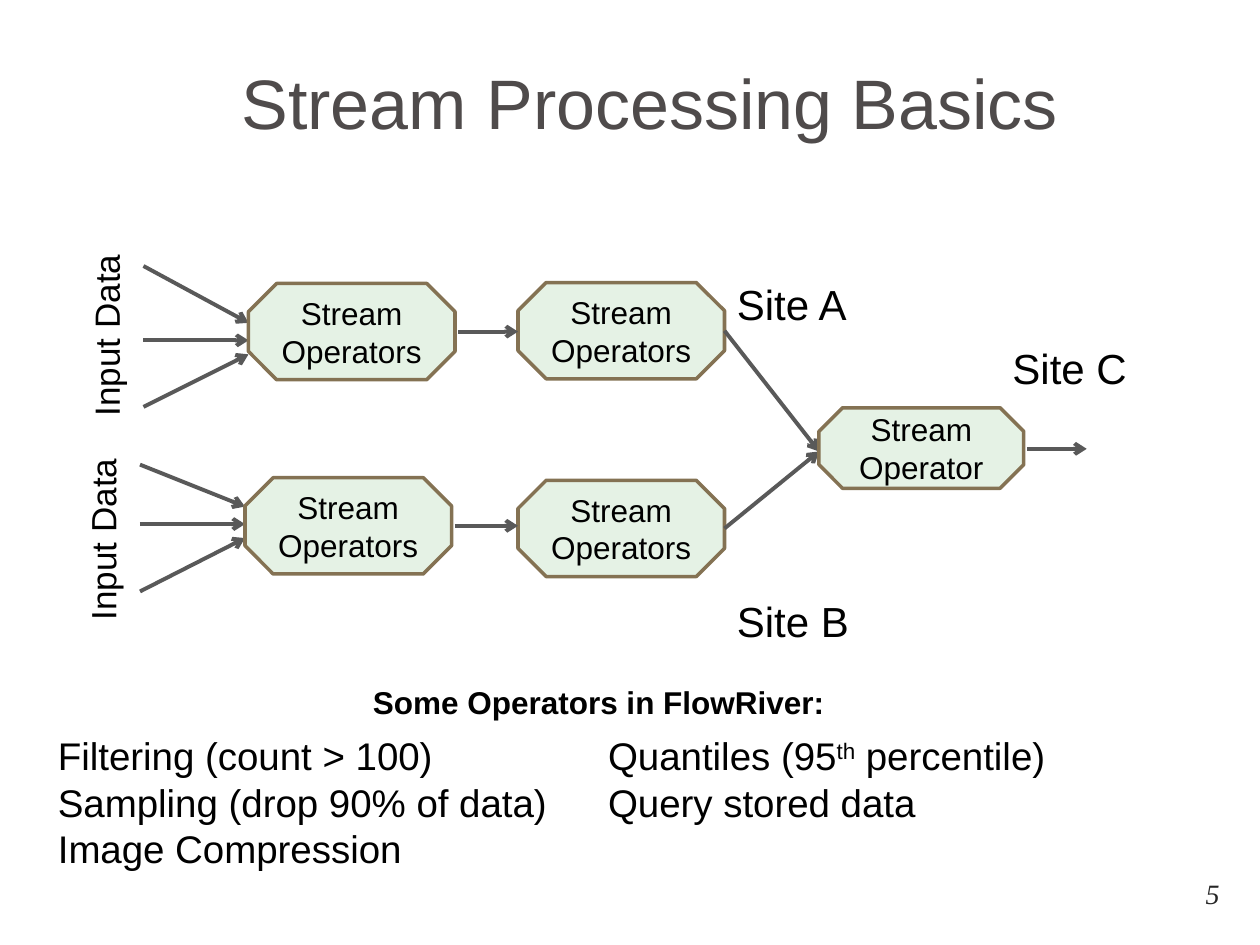
from lxml.etree import SubElement
from pptx import Presentation
from pptx.dml.color import RGBColor
from pptx.enum.shapes import MSO_CONNECTOR as Line, MSO_SHAPE as Shape
from pptx.enum.text import MSO_ANCHOR as Anchor, PP_ALIGN as Align
from pptx.oxml.ns import qn
from pptx.util import Pt

BLACK, GREY, BROWN, GREEN = "000000", "595959", "847253", "008000"
OPERATOR_W, OPERATOR_H = 118, 55


def rgb(color):
    return RGBColor.from_string(color)


def style(paragraph, size, color=BLACK, font="Arial", align=Align.LEFT):
    paragraph.alignment = align
    paragraph.font.size = Pt(size)
    paragraph.font.name = font
    paragraph.font.color.rgb = rgb(color)


def add_text(slide, box, lines, size, wrap=True, **look):
    text_box = slide.shapes.add_textbox(*map(Pt, box))
    frame = text_box.text_frame
    frame.word_wrap = wrap
    frame.text = "\n".join(lines)
    for paragraph in frame.paragraphs:
        style(paragraph, size, **look)
    return text_box


def add_arrow(slide, x1, y1, x2, y2):
    arrow = slide.shapes.add_connector(Line.STRAIGHT, Pt(x1), Pt(y1), Pt(x2), Pt(y2))
    arrow.line.color.rgb = rgb(GREY)
    arrow.line.width = Pt(2.25)
    SubElement(arrow.line._get_or_add_ln(), qn("a:tailEnd"), type="arrow")
    SubElement(arrow._element.spPr, qn("a:effectLst"))


def add_operator(slide, box, label):
    operator = slide.shapes.add_shape(Shape.OCTAGON, *map(Pt, box))
    operator.shadow.inherit = False
    operator.fill.solid()
    operator.fill.fore_color.rgb = rgb(GREEN)
    tint = operator._element.spPr.find(qn("a:solidFill"))[0]
    SubElement(tint, qn("a:alpha"), val="10000")
    operator.line.color.rgb = rgb(BROWN)
    operator.line.width = Pt(2)
    frame = operator.text_frame
    frame.word_wrap = True
    frame.vertical_anchor = Anchor.MIDDLE
    frame.text = label
    style(frame.paragraphs[0], 18, align=Align.CENTER)


def add_title(slide, box, text):
    title = slide.shapes.title
    title.left, title.top, title.width, title.height = map(Pt, box)
    frame = title.text_frame
    frame.text = text
    frame.vertical_anchor = Anchor.BOTTOM
    frame.margin_bottom = Pt(7.2)
    style(frame.paragraphs[0], 40, "4F4B4B", align=Align.CENTER)


def add_site_branch(slide, left, top, second, feeds, label_middle):
    """Input data flowing through two operators; feeds are (start, end) heights."""
    label_w, label_h = 108, 32
    label_box = (left - 81 - label_w / 2, top + label_middle - label_h / 2, label_w, label_h)
    add_text(slide, label_box, ["Input Data"], 20, wrap=False).rotation = 270
    for start, end in feeds:
        add_arrow(slide, left - 60, top + start, left, top + end)
    for x, y in ((left, top), second):
        add_operator(slide, (x, y, OPERATOR_W, OPERATOR_H), "Stream Operators")
    link_y = top + OPERATOR_H / 2
    add_arrow(slide, left + OPERATOR_W + 2, link_y, second[0], link_y)


def add_merge_site(slide, left, top, sources):
    width, height = 117, 46
    for x, y in sources:
        add_arrow(slide, x, y, left, top + height / 2 + 2)
    add_operator(slide, (left, top, width, height), "Stream Operator")
    output_y = top + height / 2 + 0.5
    add_arrow(slide, left + width + 2, output_y, left + width + 36, output_y)


def add_operator_list(slide, left, top):
    heading = add_text(slide, (left + 180, top - 28, 276, 29),
                       ["Some Operators in FlowRiver:"], 18, wrap=False)
    heading.text_frame.paragraphs[0].font.bold = True
    examples = add_text(slide, (left, top, 643, 114),
                        ["Filtering (count > 100)", "Sampling (drop 90% of data)",
                         "Image Compression", "", "Query stored data"], 22)
    frame = examples.text_frame
    # The bottom margin leaves room for three lines in each column.
    frame.margin_bottom = Pt(27)
    frame._txBody.bodyPr.set("numCol", "2")
    quantiles = frame.paragraphs[3]
    for text in ("Quantiles (95", "th", " percentile)"):
        run = quantiles.add_run()
        run.text = text
        if text == "th":
            run.font._element.set("baseline", "30000")


def main():
    deck = Presentation()
    deck.slide_width, deck.slide_height = Pt(720), Pt(540)
    slide = deck.slides.add_slide(deck.slide_layouts[5])

    add_title(slide, (35, -0.5, 672.5, 90), "Stream Processing Basics")
    site_a, site_b = (296, 161.5), (296, 274.5)
    add_site_branch(slide, 142, 162, site_a,
                    [(-10, 22.5), (32.5, 32.5), (70.5, 40.5)], 29)
    add_site_branch(slide, 140, 273, site_b,
                    [(-7.5, 16.5), (26.5, 26.5), (65, 34.5)], 34.5)
    add_merge_site(slide, 468, 233,
                   [(x + OPERATOR_W, y + OPERATOR_H / 2) for x, y in (site_a, site_b)])
    for site, x, y, width in (("A", 414, 155.5, 210), ("B", 414, 337, 210),
                              ("C", 571.5, 192, 97)):
        add_text(slide, (x, y, width, 36), [f"Site {site}"], 24)
    add_operator_list(slide, 26, 415)
    number = add_text(slide, (657, 496, 47, 29), ["5"], 16,
                      color="262626", font="Times New Roman", align=Align.RIGHT)
    number.text_frame.vertical_anchor = Anchor.MIDDLE
    number.text_frame.paragraphs[0].font.italic = True

    deck.save("out.pptx")


if __name__ == "__main__":
    main()
